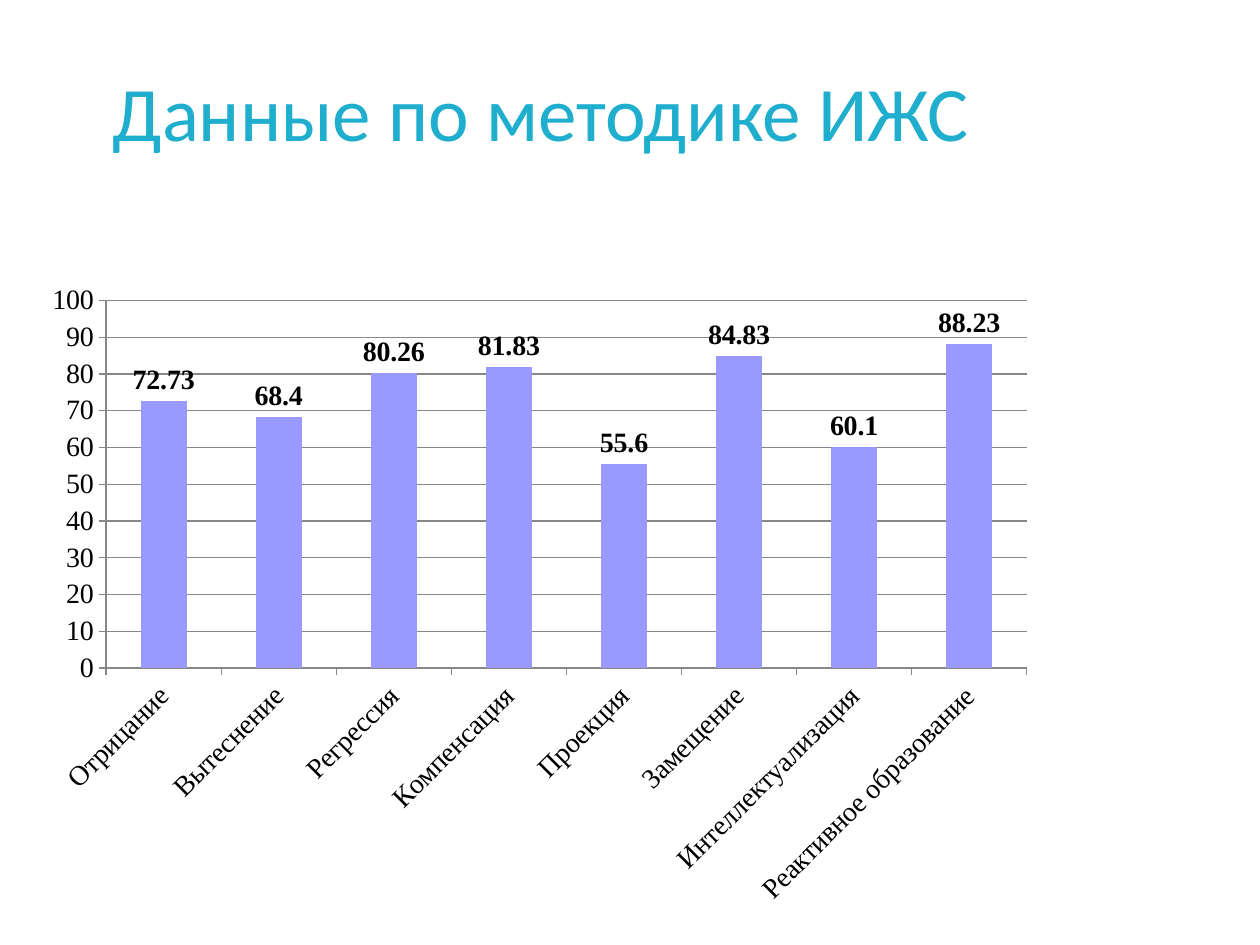
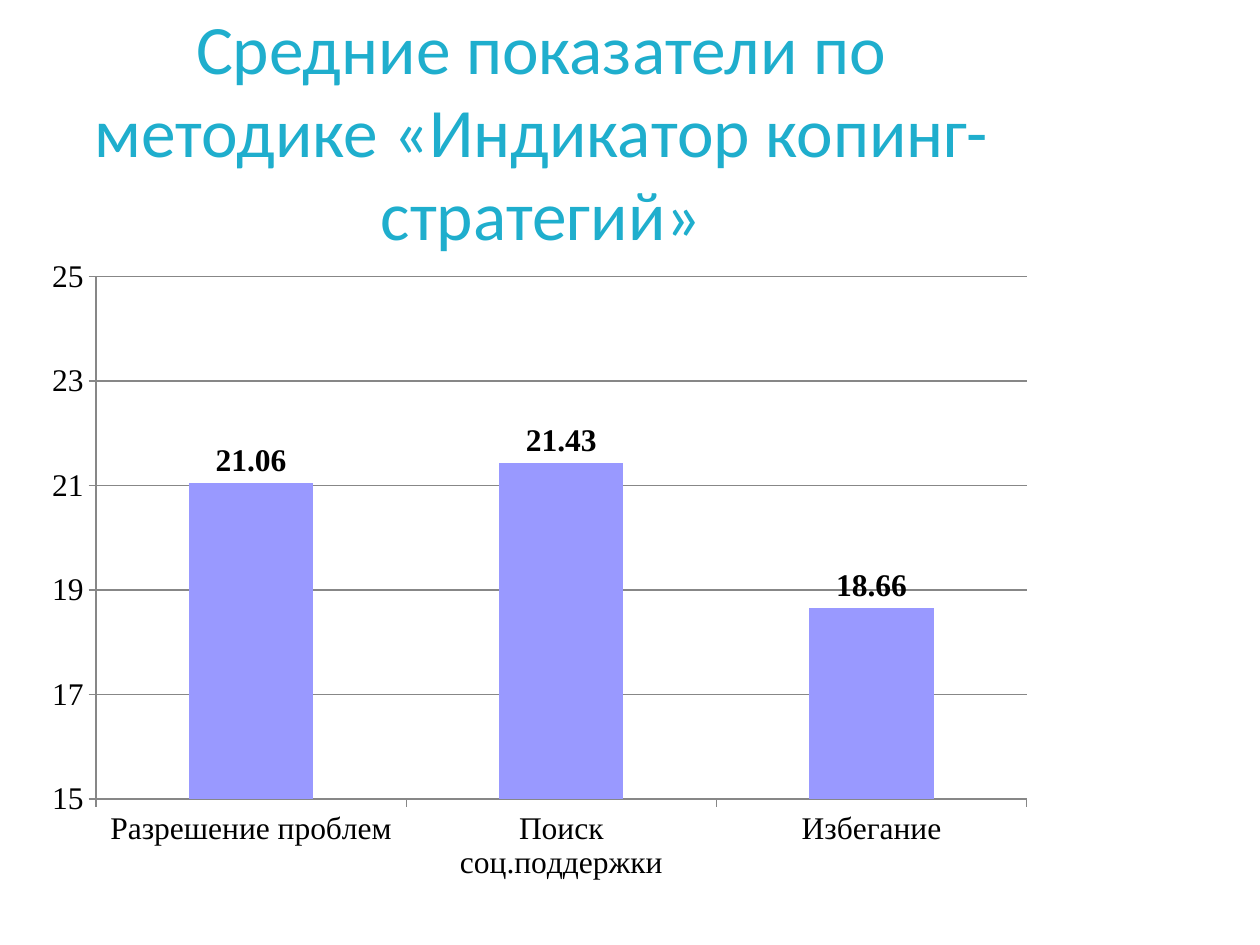
from lxml import etree
from pptx import Presentation
from pptx.chart.data import CategoryChartData
from pptx.dml.color import RGBColor
from pptx.enum.chart import XL_CHART_TYPE, XL_LABEL_POSITION, XL_TICK_MARK
from pptx.enum.text import MSO_ANCHOR, PP_ALIGN
from pptx.oxml.ns import qn
from pptx.util import Pt

COLUMNS = XL_CHART_TYPE.COLUMN_CLUSTERED
OUTSIDE_END = XL_LABEL_POSITION.OUTSIDE_END
TICK_OUT = XL_TICK_MARK.OUTSIDE
TICK_NONE = XL_TICK_MARK.NONE
MIDDLE = MSO_ANCHOR.MIDDLE
CENTER = PP_ALIGN.CENTER

TITLE_COLOR = RGBColor(0x1F, 0xAE, 0xCD)
BAR_COLOR = RGBColor(0x99, 0x99, 0xFF)
LINE_COLOR = RGBColor(0x87, 0x87, 0x87)
TEXT_COLOR = RGBColor(0, 0, 0)
TITLE_FONT = "Calibri"
CHART_FONT = "Times New Roman"

LEFT, WIDTH = 20.16, 578.16
TITLE_HEIGHT, CHART_HEIGHT = 96.48, 368.64

SLIDES = [
    {
        "title": "Данные по методике ИЖС",
        "title_size": 44,
        "title_top": 15.12,
        "chart_top": 156.96,
        "values": {
            "Отрицание": 72.73,
            "Вытеснение": 68.4,
            "Регрессия": 80.26,
            "Компенсация": 81.83,
            "Проекция": 55.6,
            "Замещение": 84.83,
            "Интеллектуализация": 60.1,
            "Реактивное образование": 88.23,
        },
        "scale": {"minimum_scale": 0, "maximum_scale": 100, "major_unit": 10},
        "chart_size": 16,
        "label_angle": -45,
        "plot_area": {"x": 0.07, "y": 0.04, "w": 0.91, "h": 0.57},
    },
    {
        "title": "Средние показатели по методике «Индикатор копинг-стратегий»",
        "title_size": 39.6,
        "title_top": 25.92,
        "chart_top": 139.68,
        "values": {
            "Разрешение проблем": 21.06,
            "Поиск соц.поддержки": 21.43,
            "Избегание": 18.66,
        },
        "scale": {"minimum_scale": 15, "maximum_scale": 25, "major_unit": 2},
        "chart_size": 18,
        "label_angle": 0,
        "plot_area": {"x": 0.06, "y": 0.05, "w": 0.92, "h": 0.81},
    },
]


def set_all(target, values):
    for name, value in values.items():
        setattr(target, name, value)


def set_font(font, name, size, color, bold=False):
    set_all(font, {"name": name, "size": Pt(size), "bold": bold})
    font.color.rgb = color


def add_title(page, box, text, size):
    frame = page.shapes.add_textbox(*map(Pt, box)).text_frame
    set_all(frame, {"word_wrap": True, "vertical_anchor": MIDDLE})
    para = frame.paragraphs[0]
    para.alignment = CENTER
    span = para.add_run()
    span.text = text
    set_font(span.font, TITLE_FONT, size, TITLE_COLOR)


def place_plot_area(chart, fractions):
    plot_area = chart._chartSpace.find(".//" + qn("c:plotArea"))
    layout = plot_area.find(qn("c:layout"))
    if layout is None:
        layout = etree.Element(qn("c:layout"))
        plot_area.insert(0, layout)
    manual = etree.SubElement(layout, qn("c:manualLayout"))
    settings = {"layoutTarget": "inner", "xMode": "edge", "yMode": "edge", **fractions}
    for name, value in settings.items():
        etree.SubElement(manual, qn("c:" + name)).set("val", str(value))


def style_axis(axis, size):
    set_all(axis, {"major_tick_mark": TICK_OUT, "minor_tick_mark": TICK_NONE})
    set_font(axis.tick_labels.font, CHART_FONT, size, TEXT_COLOR)
    axis.format.line.color.rgb = LINE_COLOR
    axis.format.line.width = Pt(0.75)


def add_column_chart(page, box, content):
    data = CategoryChartData()
    data.categories = list(content["values"])
    data.add_series("Series 1", list(content["values"].values()))
    chart = page.shapes.add_chart(COLUMNS, *map(Pt, box), data).chart
    set_all(chart, {"has_legend": False, "has_title": False})
    size = content["chart_size"]
    set_font(chart.font, CHART_FONT, size, TEXT_COLOR)

    for axis in (chart.category_axis, chart.value_axis):
        style_axis(axis, size)
    set_all(chart.value_axis, {"has_major_gridlines": True, **content["scale"]})
    gridline = chart.value_axis.major_gridlines.format.line
    gridline.color.rgb = LINE_COLOR
    gridline.width = Pt(0.75)
    label_body = chart.category_axis._element.find(
        qn("c:txPr") + "/" + qn("a:bodyPr"))
    label_body.set("rot", str(content["label_angle"] * 60000))

    plot = chart.plots[0]
    set_all(plot, {"gap_width": 150, "vary_by_categories": False,
                   "has_data_labels": True})
    fill = plot.series[0].format.fill
    fill.solid()
    fill.fore_color.rgb = BAR_COLOR
    labels = plot.data_labels
    set_all(labels, {"show_value": True, "position": OUTSIDE_END})
    set_font(labels.font, CHART_FONT, size, TEXT_COLOR, bold=True)
    place_plot_area(chart, content["plot_area"])


def add_chart_slide(deck, content):
    page = deck.slides.add_slide(deck.slide_layouts[6])
    title_box = (LEFT, content["title_top"], WIDTH, TITLE_HEIGHT)
    chart_box = (LEFT, content["chart_top"], WIDTH, CHART_HEIGHT)
    add_title(page, title_box, content["title"], content["title_size"])
    add_column_chart(page, chart_box, content)


def main():
    deck = Presentation()
    set_all(deck, {"slide_width": Pt(720), "slide_height": Pt(540)})
    for content in SLIDES:
        add_chart_slide(deck, content)
    deck.save("out.pptx")


if __name__ == "__main__":
    main()
